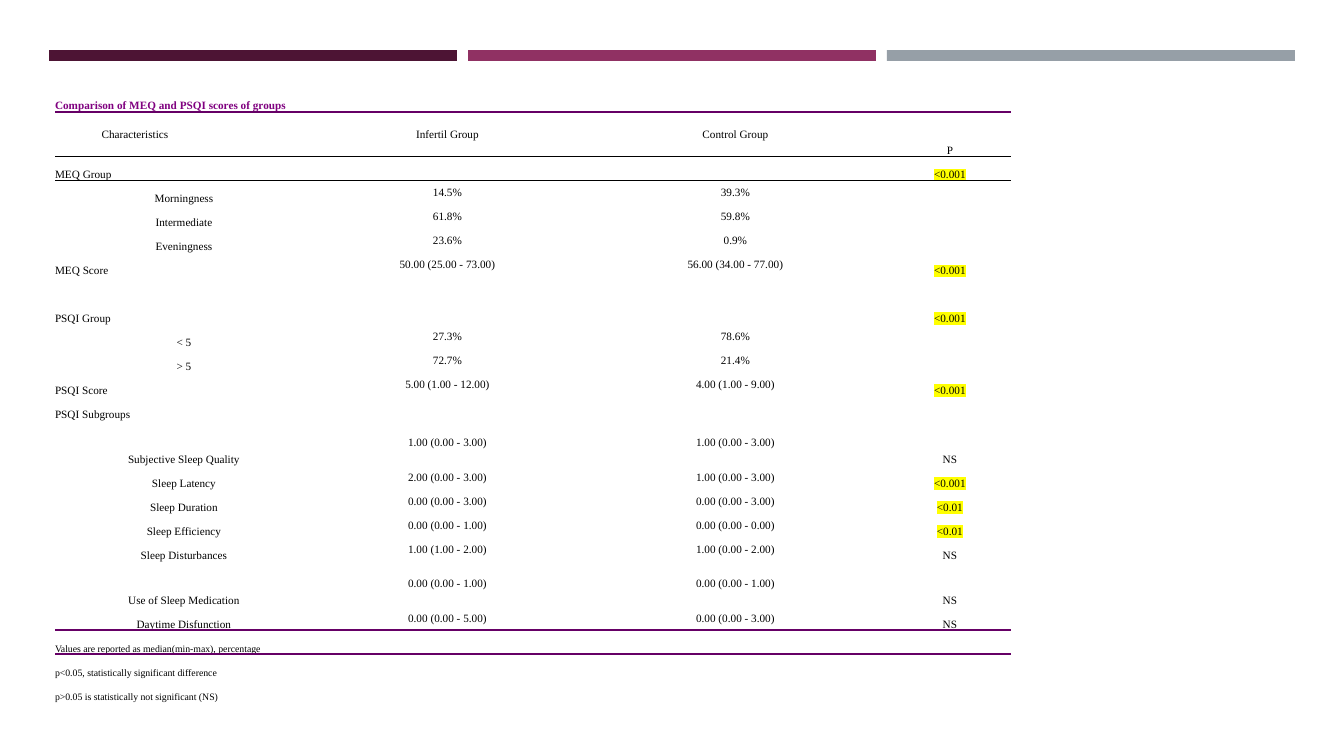
from lxml import etree
from pptx import Presentation
from pptx import util as u
from pptx.dml.color import RGBColor
from pptx.enum import shapes, text
from pptx.oxml.ns import qn

# Content: label, infertil group, control group, p
TITLE = "Comparison of MEQ and PSQI scores of groups"
HEAD = ("Characteristics", "Infertil Group", "Control Group", "P")
ROWS = [
    ("MEQ Group", "", "", "<0.001"),
    ("Morningness", "14.5%", "39.3%", ""),
    ("Intermediate", "61.8%", "59.8%", ""),
    ("Eveningness", "23.6%", "0.9%", ""),
    ("MEQ Score", "50.00 (25.00 - 73.00)", "56.00 (34.00 - 77.00)", "<0.001"),
    ("", "", "", ""),
    ("PSQI Group", "", "", "<0.001"),
    ("< 5", "27.3%", "78.6%", ""),
    ("> 5", "72.7%", "21.4%", ""),
    ("PSQI Score", "5.00 (1.00 - 12.00)", "4.00 (1.00 - 9.00)", "<0.001"),
    ("PSQI Subgroups", "", "", ""),
    ("Subjective Sleep Quality", "1.00 (0.00 - 3.00)", "1.00 (0.00 - 3.00)", "NS"),
    ("Sleep Latency", "2.00 (0.00 - 3.00)", "1.00 (0.00 - 3.00)", "<0.001"),
    ("Sleep Duration", "0.00 (0.00 - 3.00)", "0.00 (0.00 - 3.00)", "<0.01"),
    ("Sleep Efficiency", "0.00 (0.00 - 1.00)", "0.00 (0.00 - 0.00)", "<0.01"),
    ("Sleep Disturbances", "1.00 (1.00 - 2.00)", "1.00 (0.00 - 2.00)", "NS"),
    ("Use of Sleep Medication", "0.00 (0.00 - 1.00)", "0.00 (0.00 - 1.00)", "NS"),
    ("Daytime Disfunction", "0.00 (0.00 - 5.00)", "0.00 (0.00 - 3.00)", "NS"),
]
NOTES = [
    "Values are reported as median(min-max), percentage",
    "p<0.05, statistically significant difference",
    "p>0.05 is statistically not significant (NS)",
]
LEFT = {"MEQ Group", "MEQ Score", "PSQI Group", "PSQI Score", "PSQI Subgroups"}
TALL = {"Characteristics", "Subjective Sleep Quality", "Use of Sleep Medication"}
BARS = ["4D1434", "903163", "969FA7"]
COLS = [160, 98, 269, 307, 122]
LOW, HIGH = 24, 45
FONT = "Times New Roman"
PLAIN = "{2D5ABB26-0587-4C30-8999-92F81FD0307C}"
BOTTOM, MIDDLE = text.MSO_ANCHOR.BOTTOM, text.MSO_ANCHOR.MIDDLE


def px(n):
    return u.Emu(round(n * 914400 / 100.8))


def rgb(code):
    return RGBColor.from_string(code)


def write(cell, words, size=8, color="000000", bold=False, mid=True,
          anchor=BOTTOM, mark=None):
    cell.vertical_anchor = anchor
    para = cell.text_frame.paragraphs[0]
    para.alignment = text.PP_ALIGN.CENTER if mid else text.PP_ALIGN.LEFT
    run = para.add_run()
    run.text = words
    font = run.font
    font.name, font.size, font.bold = FONT, u.Pt(size), bold
    font.color.rgb = rgb(color)
    if mark:
        light = etree.Element(qn("a:highlight"))
        etree.SubElement(light, qn("a:srgbClr"), val=mark)
        font._element.find(qn("a:latin")).addprevious(light)


def edge(cell, side, color, width):
    line = etree.Element(qn("a:ln" + side), w=str(u.Pt(width)))
    fill = etree.SubElement(line, qn("a:solidFill"))
    etree.SubElement(fill, qn("a:srgbClr"), val=color)
    cell._tc.get_or_add_tcPr().insert(0, line)


deck = Presentation()
deck.slide_width, deck.slide_height = px(1344), px(756)
slide = deck.slides.add_slide(deck.slide_layouts[6])

# Top bars
for i, color in enumerate(BARS):
    bar = slide.shapes.add_shape(shapes.MSO_SHAPE.RECTANGLE,
                                 px(49 + 419 * i), px(50), px(408), px(11))
    bar.shadow.inherit = False
    bar.fill.solid()
    bar.fill.fore_color.rgb = rgb(color)
    bar.line.fill.background()

# Table grid
labels = [TITLE, HEAD[0]] + [row[0] for row in ROWS] + NOTES
highs = [HIGH if label in TALL else LOW for label in labels]
frame = slide.shapes.add_table(len(labels), len(COLS), px(55), px(88),
                               px(sum(COLS)), px(sum(highs)))
table = frame.table
table.first_row = table.horz_banding = False
table._tbl.tblPr.find(qn("a:tableStyleId")).text = PLAIN
for col, width in zip(table.columns, COLS):
    col.width = px(width)
for row, high in zip(table.rows, highs):
    row.height = px(high)
for cell in table.iter_cells():
    cell.margin_left = cell.margin_right = cell.margin_top = cell.margin_bottom = 0
    cell.fill.background()

# Title and notes
table.cell(0, 0).merge(table.cell(0, 3))
write(table.cell(0, 0), TITLE, color="800080", bold=True, mid=False)
first = len(ROWS) + 2
for r, note in enumerate(NOTES, first):
    table.cell(r, 0).merge(table.cell(r, 2))
    write(table.cell(r, 0), note, size=7, mid=False)

# Header and body
for r, (label, *values, p) in enumerate([HEAD] + ROWS, 1):
    inner = label and label not in LEFT
    if r > 1 and (inner or label == "PSQI Subgroups"):
        table.cell(r, 0).merge(table.cell(r, 1))
    if label:
        write(table.cell(r, 0), label, mid=bool(inner),
              anchor=MIDDLE if r == 1 else BOTTOM)
    for c, value in enumerate(values, 2):
        if value:
            write(table.cell(r, c), value, anchor=MIDDLE)
    if p:
        write(table.cell(r, 4), p, mark="FFFF00" if p[0] == "<" else None)

# Small type in empty cells keeps the rows low
for cell in table.iter_cells():
    if not cell.text_frame.text:
        para = cell.text_frame.paragraphs[0]._p
        etree.SubElement(para, qn("a:endParaRPr"), sz="800")

# Rules, from the lowest up
for r, color, width in [(first - 1, "660066", 1.5), (1, "000000", 0.75),
                        (0, "660066", 1.5)]:
    for c in range(len(COLS)):
        edge(table.cell(r, c), "B", color, width)
        edge(table.cell(r + 1, c), "T", color, width)

deck.save("out.pptx")
